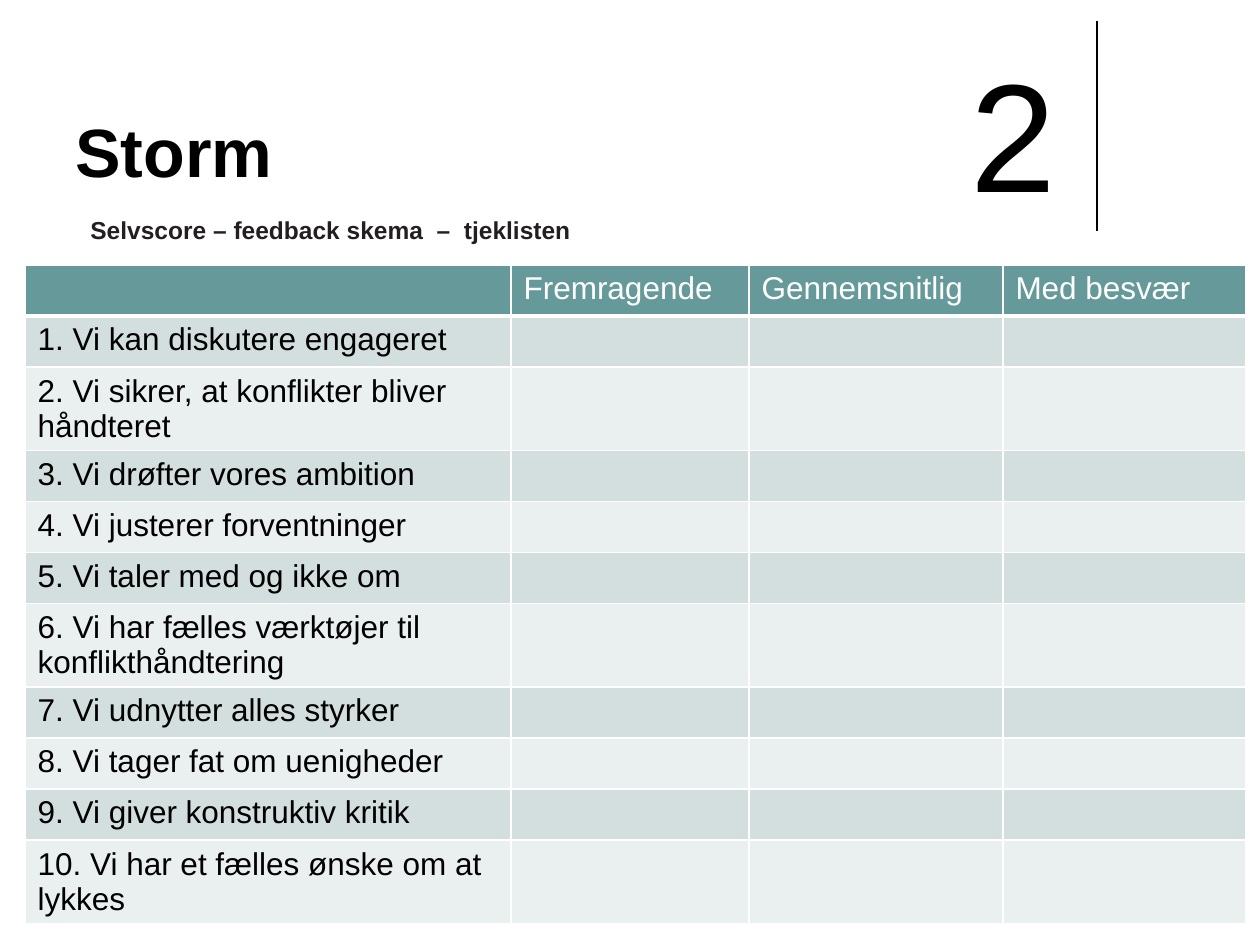
from dataclasses import dataclass

from lxml import etree
from pptx import Presentation
from pptx import util as u
from pptx.dml.color import RGBColor
from pptx.enum import shapes, text
from pptx.oxml import ns

SCALE = 914400 / 126
COLORS = {
    "black": "000000",
    "white": "FFFFFF",
    "subtitle": "231F20",
    "header": "669999",
    "odd": "D3DEDE",
    "even": "EAEFEF",
}
HEADINGS = ["", "Fremragende", "Gennemsnitlig", "Med besvær"]
STATEMENTS = [
    "Vi kan diskutere engageret",
    "Vi sikrer, at konflikter bliver håndteret",
    "Vi drøfter vores ambition",
    "Vi justerer forventninger",
    "Vi taler med og ikke om",
    "Vi har fælles værktøjer til konflikthåndtering",
    "Vi udnytter alles styrker",
    "Vi tager fat om uenigheder",
    "Vi giver konstruktiv kritik",
    "Vi har et fælles ønske om at lykkes",
]
TWO_LINE_ROWS = {2, 6, 10}
COLUMN_WIDTHS = [486, 238, 254, 243]
ROW_HEIGHT, TALL_ROW_HEIGHT = 50, 83


@dataclass
class Label:
    content: str
    left: int
    top: int
    width: int
    height: int
    size: int
    color: str = "black"
    bold: bool = False
    anchor: text.MSO_ANCHOR = text.MSO_ANCHOR.TOP
    wrap: bool = False
    top_inset: int = 6


LABELS = [
    Label("Storm", 63, 18, 1040, 179, 39, bold=True,
          anchor=text.MSO_ANCHOR.BOTTOM, wrap=True),
    Label("Selvscore – feedback skema  –  tjeklisten", 78, 207, 508, 131, 14,
          color="subtitle", bold=True, top_inset=8),
    Label("2", 958, 16, 112, 199, 88, top_inset=23),
]


def px(value: int) -> u.Emu:
    return u.Emu(round(value * SCALE))


def rgb(name: str) -> RGBColor:
    return RGBColor.from_string(COLORS[name])


def write_text(frame, content: str, *, size: int, color: str, bold: bool = False) -> None:
    paragraph = frame.paragraphs[0]
    paragraph.font.size = u.Pt(size)
    run = paragraph.add_run()
    run.text = content
    run.font.name = "Arial"
    run.font.size = u.Pt(size)
    run.font.bold = bold
    run.font.color.rgb = rgb(color)


def add_label(slide, label: Label) -> None:
    shape = slide.shapes.add_textbox(
        px(label.left), px(label.top), px(label.width), px(label.height))
    frame = shape.text_frame
    frame.word_wrap = label.wrap
    frame.auto_size = text.MSO_AUTO_SIZE.NONE
    frame.vertical_anchor = label.anchor
    frame.margin_top = px(label.top_inset)
    write_text(frame, label.content, size=label.size, color=label.color, bold=label.bold)


def add_divider(slide) -> None:
    line = slide.shapes.add_connector(
        shapes.MSO_CONNECTOR.STRAIGHT, px(1097), px(21), px(1097), px(231))
    line.line.color.rgb = rgb("black")
    line.line.width = u.Pt(0.75)
    etree.SubElement(line.element.spPr, ns.qn("a:effectLst"))


def set_borders(cell, top: int = 1, bottom: int = 1) -> None:
    """Draw white borders; widths are in points."""
    properties = cell._tc.get_or_add_tcPr()
    widths = {"lnL": 1, "lnR": 1, "lnT": top, "lnB": bottom}
    for index, (side, width) in enumerate(widths.items()):
        border = etree.Element(ns.qn(f"a:{side}"), w=str(u.Pt(width)))
        fill = etree.SubElement(border, ns.qn("a:solidFill"))
        etree.SubElement(fill, ns.qn("a:srgbClr"), val=COLORS["white"])
        properties.insert(index, border)


def add_score_table(slide) -> None:
    numbered = [f"{number}. {line}" for number, line in enumerate(STATEMENTS, 1)]
    rows = [HEADINGS] + [[line, "", "", ""] for line in numbered]
    heights = [TALL_ROW_HEIGHT if index in TWO_LINE_ROWS else ROW_HEIGHT
               for index in range(len(rows))]
    table = slide.shapes.add_table(
        len(rows), len(HEADINGS), px(25), px(265),
        px(sum(COLUMN_WIDTHS)), px(sum(heights))).table
    for column, width in zip(table.columns, COLUMN_WIDTHS):
        column.width = px(width)
    for row_index, (row, height) in enumerate(zip(rows, heights)):
        table.rows[row_index].height = px(height)
        is_header = row_index == 0
        fill = "header" if is_header else "odd" if row_index % 2 else "even"
        for column_index, content in enumerate(row):
            cell = table.cell(row_index, column_index)
            cell.fill.solid()
            cell.fill.fore_color.rgb = rgb(fill)
            set_borders(cell, top=3 if row_index == 1 else 1,
                        bottom=3 if is_header else 1)
            if content:
                write_text(cell.text_frame, content, size=18,
                           color="white" if is_header else "black")


def main() -> None:
    presentation = Presentation()
    presentation.slide_width = px(1260)
    presentation.slide_height = px(945)
    slide = presentation.slides.add_slide(presentation.slide_layouts[6])
    add_divider(slide)
    add_score_table(slide)
    for label in LABELS:
        add_label(slide, label)
    presentation.save("out.pptx")


if __name__ == "__main__":
    main()
